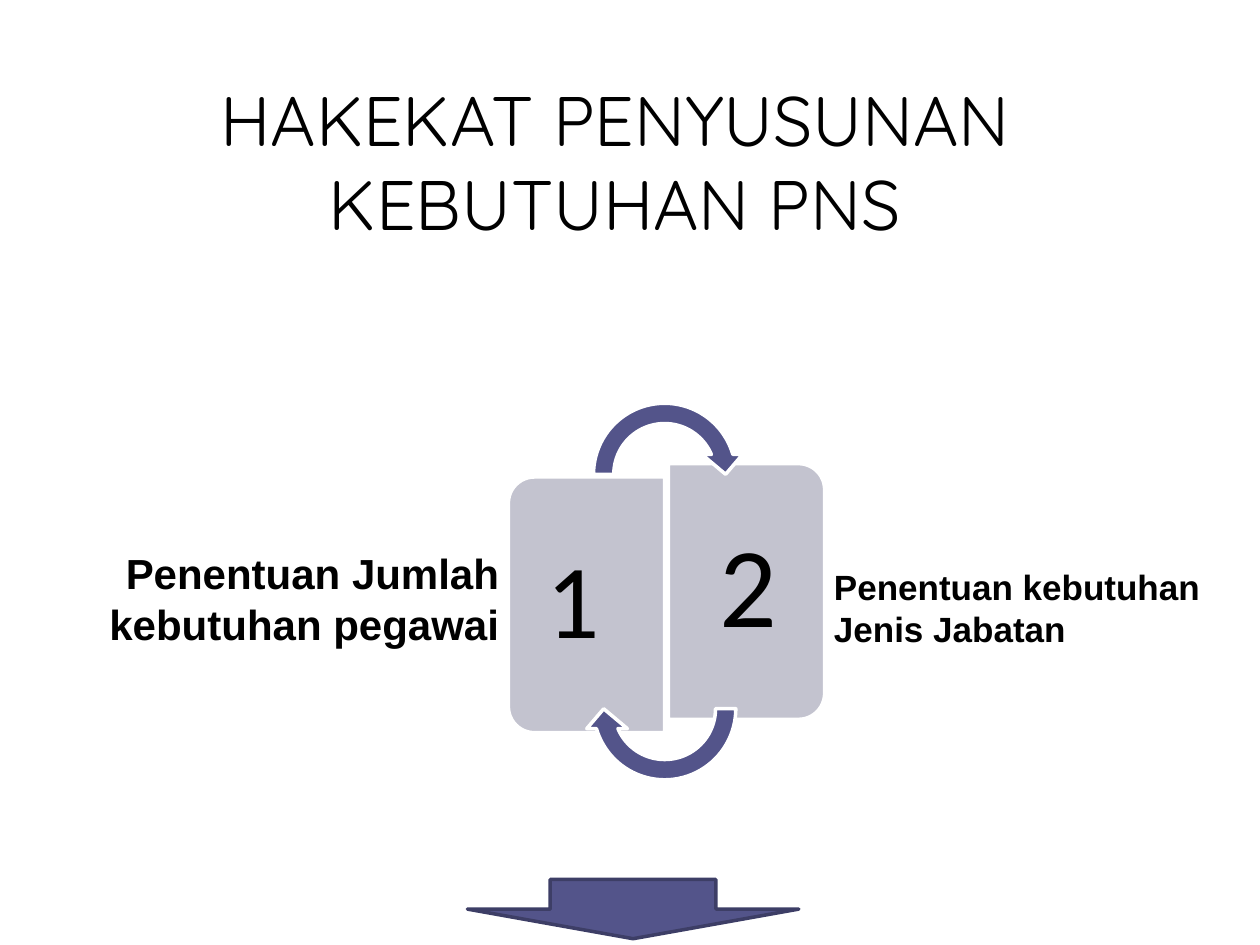
from dataclasses import dataclass

from pptx import Presentation
from pptx.dml.color import RGBColor
from pptx.enum.shapes import MSO_SHAPE
from pptx.enum.text import MSO_ANCHOR, MSO_AUTO_SIZE, PP_ALIGN
from pptx.util import Inches, Pt


@dataclass(frozen=True)
class Theme:
    ink: str = "000000"
    accent: str = "53548A"
    accent_edge: str = "3D3E66"
    card: str = "C3C3CF"
    paper: str = "FFFFFF"
    title_font: str = "Quicksand"
    label_font: str = "Arial"
    number_font: str = "Calibri"
    title_size: int = 40
    left_label_size: int = 24
    right_label_size: int = 20
    first_number_size: int = 60
    second_number_size: int = 65
    line_width: int = 2


THEME = Theme()


@dataclass(frozen=True)
class Box:
    left: int
    top: int
    width: int
    height: int

    def share(self, left, top, width, height):
        return Box(
            round(self.left + self.width * left / 100),
            round(self.top + self.height * top / 100),
            round(self.width * width / 100),
            round(self.height * height / 100),
        )

    def centered(self, middle_x, middle_y, width, height):
        return self.share(middle_x - width / 2, middle_y - height / 2, width, height)

    def edges(self):
        return self.left, self.top, self.width, self.height


def write(frame, text, font_name, size, align=PP_ALIGN.LEFT, bold=False):
    frame.word_wrap = True
    frame.auto_size = MSO_AUTO_SIZE.NONE
    para = frame.paragraphs[0]
    para.text = text
    para.alignment = align
    para.font.name = font_name
    para.font.size = Pt(size)
    para.font.bold = bold
    para.font.color.rgb = RGBColor.from_string(THEME.ink)
    return para


def add_filled(shapes, kind, box, fill, line, rotation=0, adjustments=()):
    shape = shapes.add_shape(kind, *box.edges())
    shape.shadow.inherit = False
    shape.rotation = rotation
    for index, value in enumerate(adjustments):
        shape.adjustments[index] = value
    shape.fill.solid()
    shape.fill.fore_color.rgb = RGBColor.from_string(fill)
    shape.line.color.rgb = RGBColor.from_string(line)
    shape.line.width = Pt(THEME.line_width)


def place_title(page, box):
    title = page.shapes.title
    title.left, title.top, title.width, title.height = box.edges()
    title.text_frame.vertical_anchor = MSO_ANCHOR.MIDDLE
    write(title.text_frame, "HAKEKAT PENYUSUNAN KEBUTUHAN PNS",
          THEME.title_font, THEME.title_size, PP_ALIGN.CENTER)


def place_label(page, box, text, size, align):
    label = page.shapes.add_textbox(*box.edges())
    write(label.text_frame, text, THEME.label_font, size, align, bold=True)


def place_number(shapes, box, text, size, left_inset, right_inset, end_inset):
    number = shapes.add_textbox(*box.edges())
    frame = number.text_frame
    frame.margin_left, frame.margin_right = Inches(left_inset), Inches(right_inset)
    frame.margin_top = frame.margin_bottom = Inches(end_inset)
    frame.vertical_anchor = MSO_ANCHOR.MIDDLE
    write(frame, text, THEME.number_font, size).line_spacing = 0.9


def place_cycle(page, box):
    shapes = page.shapes.add_group_shape().shapes
    cards = [
        (24.6, 53.33, 270, 25.6, 53.33, "1", THEME.first_number_size, (0.25, 0.38, 0.42)),
        (75.4, 50, 90, 74, 49.84, "2", THEME.second_number_size, (0.41, 0.27, 0.45)),
    ]
    for card_x, card_y, rotation, text_x, text_y, text, size, insets in cards:
        add_filled(shapes, MSO_SHAPE.ROUND_2_SAME_RECTANGLE,
                   box.centered(card_x, card_y, 81.2, 39.37),
                   THEME.card, THEME.paper, rotation, (0.167, 0))
        place_number(shapes, box.centered(text_x, text_y, 47.2, 60.32),
                     text, size, *insets)
    for middle_y, rotation in ((20.48, 0), (79.52, 180)):
        add_filled(shapes, MSO_SHAPE.CIRCULAR_ARROW,
                   box.centered(49.4, middle_y, 51.6, 40.95),
                   THEME.accent, THEME.paper, rotation,
                   (0.125, 11.42, 204.58, 108, 0.125))


def place_down_arrow(page, box):
    add_filled(page.shapes, MSO_SHAPE.DOWN_ARROW, box, THEME.accent, THEME.accent_edge)


def main():
    deck = Presentation()
    deck.slide_width, deck.slide_height = Inches(10), Inches(7.5)
    page = deck.slides.add_slide(deck.slide_layouts[5])
    slide_box = Box(0, 0, deck.slide_width, deck.slide_height)
    place_title(page, slide_box.share(6.9, 7.33, 83.8, 19.33))
    place_label(page, slide_box.share(2.8, 57.33, 37.8, 12.13),
                "Penentuan Jumlah kebutuhan pegawai", THEME.left_label_size, PP_ALIGN.RIGHT)
    place_down_arrow(page, slide_box.share(37.1, 93.07, 26.3, 6.27))
    place_label(page, slide_box.share(65.2, 59.2, 32.8, 10.27),
                "Penentuan kebutuhan Jenis Jabatan", THEME.right_label_size, PP_ALIGN.LEFT)
    place_cycle(page, slide_box.share(40.4, 41.6, 25, 42))
    deck.save("out.pptx")


if __name__ == "__main__":
    main()
